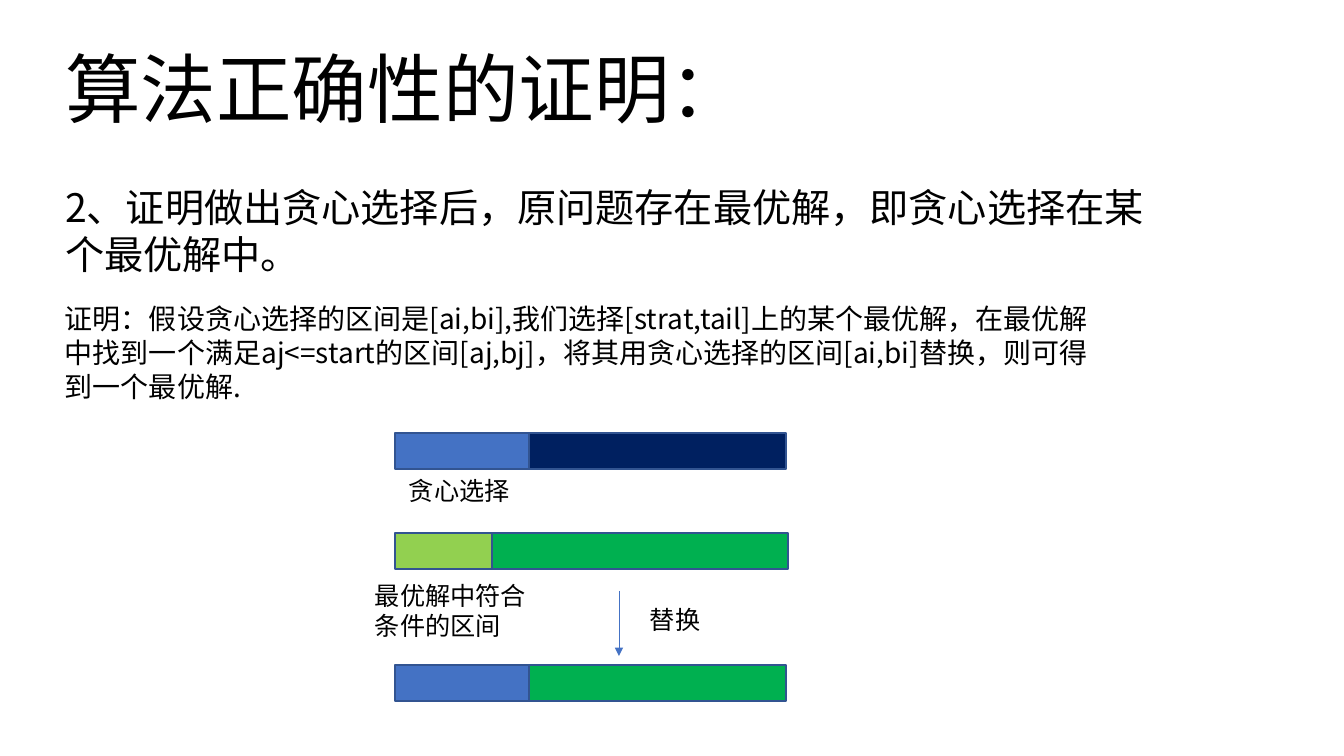
import pptx
import pptx.dml.color
import pptx.enum.shapes
import pptx.enum.text
import pptx.oxml
import pptx.oxml.ns
import pptx.util

PX = 914400 / 100.8
FONT = "Noto Sans CJK SC"
COLORS = {
    "text": "000000",
    "greedy": "4472C4",
    "rest": "002060",
    "replaced": "92D050",
    "optimal": "00B050",
    "outline": "325491",
}
BAR_LEFT = 395
BAR_HEIGHT = 36


def px(length):
    return pptx.util.Emu(round(length * PX))


def color(name):
    return pptx.dml.color.RGBColor.from_string(COLORS[name])


def add_xml(parent, tag, **attributes):
    element = pptx.oxml.parse_xml(f"<{tag} {pptx.oxml.ns.nsdecls('a')}/>")
    for key, value in attributes.items():
        element.set(key, value)
    parent.append(element)


def write_text(holder, text, size, box):
    holder.left, holder.top, holder.width, holder.height = map(px, box)
    frame = holder.text_frame
    frame.word_wrap = True
    frame.auto_size = pptx.enum.text.MSO_AUTO_SIZE.NONE
    frame.vertical_anchor = pptx.enum.text.MSO_ANCHOR.TOP
    frame.text = text
    paragraph = frame.paragraphs[0]
    paragraph.alignment = pptx.enum.text.PP_ALIGN.LEFT
    paragraph.space_before = pptx.util.Pt(0)
    properties = paragraph._p.get_or_add_pPr()
    properties.set("marL", "0")
    properties.set("indent", "0")
    add_xml(properties, "a:buNone")
    paragraph.font.size = pptx.util.Pt(size)
    paragraph.font.color.rgb = color("text")
    paragraph.font.name = FONT
    latin = properties.find(".//" + pptx.oxml.ns.qn("a:latin"))
    add_xml(latin.getparent(), "a:ea", typeface=FONT)


def add_label(slide, text, size, box):
    write_text(slide.shapes.add_textbox(0, 0, 0, 0), text, size, box)


def add_bar(slide, top, segments):
    left = BAR_LEFT
    for fill, width in segments:
        segment = slide.shapes.add_shape(
            pptx.enum.shapes.MSO_SHAPE.RECTANGLE,
            px(left), px(top), px(width), px(BAR_HEIGHT))
        segment.shadow.inherit = False
        segment.fill.solid()
        segment.fill.fore_color.rgb = color(fill)
        segment.line.color.rgb = color("outline")
        segment.line.width = pptx.util.Pt(1)
        left += width


def add_arrow(slide, x, top, bottom):
    arrow = slide.shapes.add_connector(
        pptx.enum.shapes.MSO_CONNECTOR.STRAIGHT,
        px(x), px(top), px(x), px(bottom))
    arrow.line.color.rgb = color("greedy")
    arrow.line.width = pptx.util.Pt(0.5)
    add_xml(arrow.line._get_or_add_ln(), "a:tailEnd", type="triangle")
    add_xml(arrow._element.spPr, "a:effectLst")


def main():
    deck = pptx.Presentation()
    deck.slide_width = px(1344)
    deck.slide_height = px(756)
    slide = deck.slides.add_slide(deck.slide_layouts[1])
    title, claim = slide.placeholders

    write_text(title, "算法正确性的证明：", 54, (55, 37, 723, 102))
    write_text(claim, "2、证明做出贪心选择后，原问题存在最优解，即贪心选择在某个最优解中。",
               28, (55, 178, 1128, 136))
    add_label(slide, "证明：假设贪心选择的区间是[ai,bi],我们选择[strat,tail]上的某个最优解，"
              "在最优解中找到一个满足aj<=start的区间[aj,bj]，将其用贪心选择的区间[ai,bi]替换，"
              "则可得到一个最优解.", 20, (55, 297, 1070, 112))

    add_bar(slide, 433, [("greedy", 134), ("rest", 257)])
    add_label(slide, "贪心选择", 18, (399, 470, 127, 40))
    add_bar(slide, 533, [("replaced", 97), ("optimal", 296)])
    add_label(slide, "最优解中符合条件的区间", 18, (365, 575, 195, 72))
    add_arrow(slide, 619, 591, 656)
    add_label(slide, "替换", 18, (640, 599, 116, 40))
    add_bar(slide, 665, [("greedy", 134), ("optimal", 257)])

    deck.save("out.pptx")


if __name__ == "__main__":
    main()
